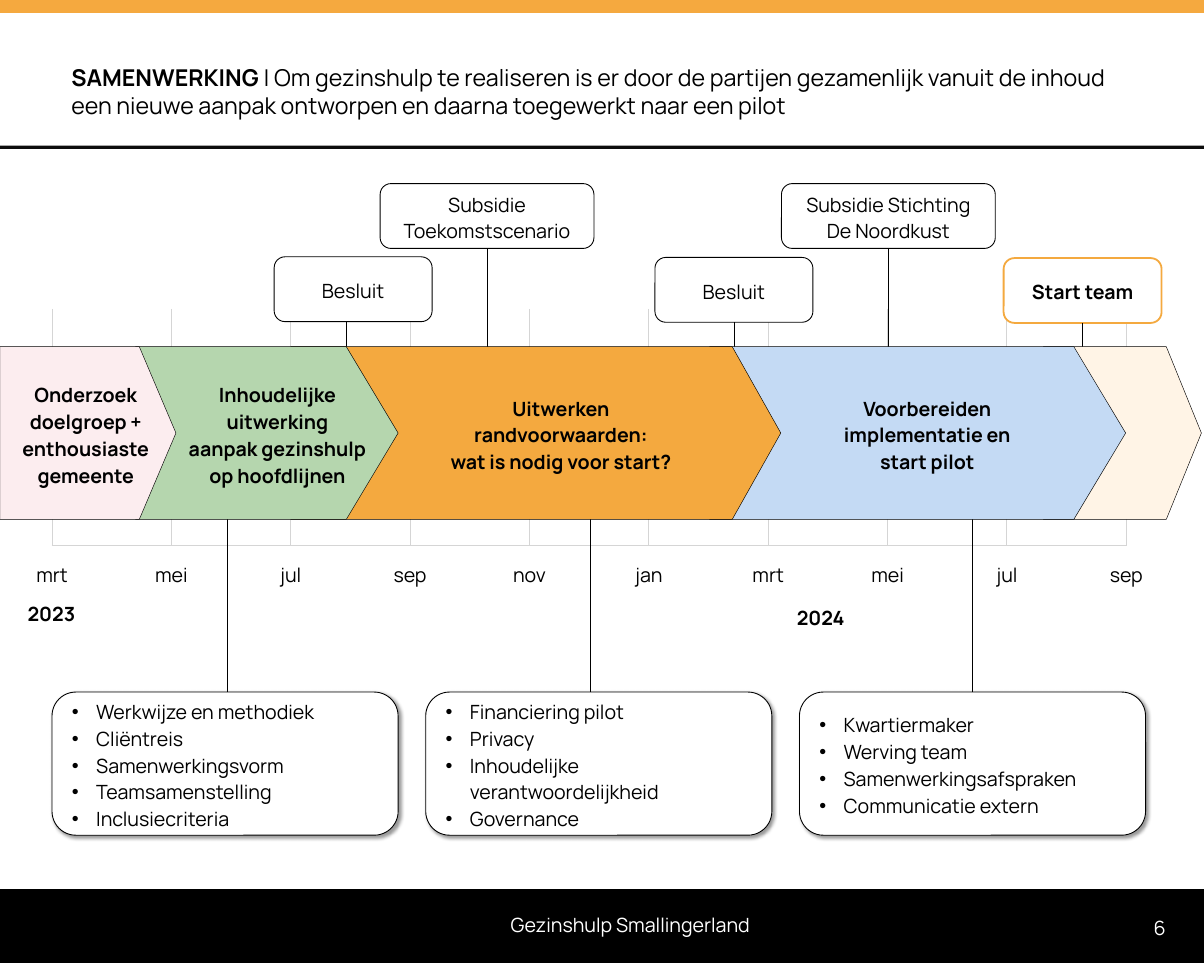
from dataclasses import dataclass

from lxml import etree
from pptx import Presentation
from pptx.dml.color import RGBColor
from pptx.enum.shapes import MSO_CONNECTOR, MSO_SHAPE
from pptx.enum.text import MSO_ANCHOR, MSO_AUTO_SIZE, PP_ALIGN
from pptx.oxml import parse_xml
from pptx.oxml.ns import nsdecls, qn
from pptx.util import Emu, Inches, Pt

RECTANGLE, ROUNDED, PENTAGON = MSO_SHAPE.RECTANGLE, MSO_SHAPE.ROUNDED_RECTANGLE, MSO_SHAPE.PENTAGON
STRAIGHT = MSO_CONNECTOR.STRAIGHT
MIDDLE, TOP = MSO_ANCHOR.MIDDLE, MSO_ANCHOR.TOP
CENTER, LEFT = PP_ALIGN.CENTER, PP_ALIGN.LEFT
TOP_SIDE, BOTTOM_SIDE = 0, 2

FONT = "Manrope"
BLACK, WHITE, ORANGE, GRID_GREY = "000000", "FFFFFF", "F4A93F", "D5D5D5"
GRID_COLUMNS, GRID_ROWS = 75, 60
AXIS_LEFT, AXIS_WIDTH, PERIODS = 3.24, 66.92, 9
ARROW_TOP, ARROW_HEIGHT, ARROW_BOTTOM = 21.6, 10.76, 32.36

presentation = Presentation()
presentation.slide_width, presentation.slide_height = Inches(18.75), Inches(15)
slide = presentation.slides.add_slide(presentation.slide_layouts[5])


@dataclass
class Box:
    left: float
    top: float
    width: float
    height: float

    def place(self) -> tuple:
        return across(self.left), down(self.top), across(self.width), down(self.height)


@dataclass
class Arrow:
    left: float
    width: float
    point: float
    fill: str
    text_left: float = 0
    text_width: float = 0
    lines: tuple = ()


@dataclass
class Callout:
    box: Box
    text: str
    line_column: float | None = None
    outline: str = BLACK
    outline_width: float = 1
    bold: bool = False


@dataclass
class Details:
    items: tuple
    line_column: float | None = None


def across(columns: float) -> Emu:
    return Emu(round(presentation.slide_width * columns / GRID_COLUMNS))


def down(rows: float) -> Emu:
    return Emu(round(presentation.slide_height * rows / GRID_ROWS))


def color(value: str) -> RGBColor:
    return RGBColor.from_string(value)


def add_run(paragraph, text: str, size: float = 22, bold: bool = False, ink: str = BLACK) -> None:
    run = paragraph.add_run()
    run.text = text
    run.font.name, run.font.size, run.font.bold = FONT, Pt(size), bold
    run.font.color.rgb = color(ink)


def write(shape, lines: tuple, bold: bool = False, ink: str = BLACK, bulleted: bool = False) -> None:
    frame = shape.text_frame
    frame.word_wrap, frame.vertical_anchor = True, MIDDLE
    frame.margin_left = frame.margin_right = Inches(0.2)
    frame.margin_top = frame.margin_bottom = 0
    for index, line in enumerate(lines):
        paragraph = frame.add_paragraph() if index else frame.paragraphs[0]
        paragraph.alignment = LEFT if bulleted else CENTER
        paragraph.line_spacing = 1.14
        if bulleted:
            properties = paragraph._p.get_or_add_pPr()
            properties.set("marL", str(Inches(0.38)))
            properties.set("indent", str(-Inches(0.38)))
            etree.SubElement(properties, qn("a:buFont"), typeface="Arial")
            etree.SubElement(properties, qn("a:buChar"), char="•")
        add_run(paragraph, line, bold=bold, ink=ink)


def add_label(box: Box, lines: tuple, bold: bool = False, ink: str = BLACK) -> None:
    write(slide.shapes.add_textbox(*box.place()), lines, bold, ink)


def add_block(kind, box: Box, fill: str, outline: str | None = None, width: float = 1):
    shape = slide.shapes.add_shape(kind, *box.place())
    shape.shadow.inherit = False
    shape.fill.solid()
    shape.fill.fore_color.rgb = color(fill)
    if outline:
        shape.line.color.rgb = color(outline)
        shape.line.width = Pt(width)
    else:
        shape.line.fill.background()
    return shape


def add_line(shape, side: int, column: float | None, start_row: float) -> None:
    box_middle = shape.left + shape.width // 2
    position = box_middle if column is None else across(column)
    connector = slide.shapes.add_connector(
        STRAIGHT, position, down(start_row), position, down(ARROW_BOTTOM))
    if column is None:
        connector.begin_connect(shape, side)
    connector.line.color.rgb = color(BLACK)
    connector.line.width = Pt(1)
    etree.SubElement(connector._element.spPr, qn("a:effectLst"))


def add_drop_shadow(shape) -> None:
    effects = shape._element.spPr.find(qn("a:effectLst"))
    effects.append(parse_xml(
        f'<a:outerShdw {nsdecls("a")} blurRad="{Pt(4)}" dist="{Pt(3)}" dir="2700000" algn="tl" '
        f'rotWithShape="0"><a:srgbClr val="{BLACK}"><a:alpha val="40000"/></a:srgbClr></a:outerShdw>'))


def add_axis(box: Box) -> None:
    table = slide.shapes.add_table(1, PERIODS, *box.place()).table
    table.first_row = table.horz_banding = False
    for column, cell in zip(table.columns, table.rows[0].cells):
        column.width = across(box.width / PERIODS)
        properties = cell._tc.get_or_add_tcPr()
        for side in ("lnL", "lnR", "lnT", "lnB"):
            border = etree.SubElement(properties, qn(f"a:{side}"), w=str(Pt(1)))
            if side == "lnT":
                etree.SubElement(border, qn("a:noFill"))
            else:
                fill = etree.SubElement(border, qn("a:solidFill"))
                etree.SubElement(fill, qn("a:srgbClr"), val=GRID_GREY)
        cell.fill.background()


def add_title(box: Box, heading: str, message: str) -> None:
    title = slide.shapes.title
    title.left, title.top, title.width, title.height = box.place()
    frame = title.text_frame
    frame.auto_size, frame.word_wrap, frame.vertical_anchor = MSO_AUTO_SIZE.NONE, True, TOP
    frame.margin_left = frame.margin_right = frame.margin_top = frame.margin_bottom = Inches(0.1)
    paragraph = frame.paragraphs[0]
    paragraph.alignment, paragraph.line_spacing = LEFT, 1.0
    add_run(paragraph, heading, 26, True)
    add_run(paragraph, message, 26)


MONTHS = ("mrt", "mei", "jul", "sep", "nov", "jan", "mrt", "mei", "jul", "sep")
CALLOUTS = (
    Callout(Box(17.08, 16, 9.84, 4.04), "Besluit", 21.56),
    Callout(Box(23.68, 11.44, 13.32, 4.04), "Subsidie Toekomstscenario"),
    Callout(Box(40.8, 16.04, 9.84, 4.04), "Besluit"),
    Callout(Box(48.68, 11.44, 13.32, 4.04), "Subsidie Stichting De Noordkust"),
    Callout(Box(62.52, 16.08, 9.84, 4.04), "Start team", None, ORANGE, 2, True),
)
DETAILS = (
    Details(("Werkwijze en methodiek", "Cliëntreis", "Samenwerkingsvorm", "Teamsamenstelling",
             "Inclusiecriteria"), 14.16),
    Details(("Financiering pilot", "Privacy", "Inhoudelijke verantwoordelijkheid", "Governance"), 36.8),
    Details(("Kwartiermaker", "Werving team", "Samenwerkingsafspraken", "Communicatie extern")),
)
ARROWS = (
    Arrow(65, 9.84, 0.222, "FFF4E6"),
    Arrow(44.2, 25.92, 0.3, "C4DAF4", 51.4, 12.72, ("Voorbereiden implementatie en start pilot",)),
    Arrow(18.12, 30.52, 0.281, ORANGE, 26.2, 17.48,
          ("Uitwerken randvoorwaarden:", "wat is nodig voor start?")),
    Arrow(8.44, 16.36, 0.3, "B5D6AE", 10.36, 13.84,
          ("Inhoudelijke uitwerking", "aanpak gezinshulp op hoofdlijnen")),
    Arrow(0, 10.96, 0.212, "FCEDEF", -1.32, 13.32,
          ("Onderzoek doelgroep + enthousiaste", "gemeente")),
)

add_block(RECTANGLE, Box(0, 0, GRID_COLUMNS, 0.8), "F5A93F")
add_block(RECTANGLE, Box(0, 9.08, GRID_COLUMNS, 0.2), "0D0D0D")
add_block(RECTANGLE, Box(0, 55.4, GRID_COLUMNS, 4.6), BLACK)
add_label(Box(70.24, 56.12, 4, 3.2), ("6",), ink=WHITE)
add_label(Box(24.84, 55.94, 28.84, 3.2), ("Gezinshulp Smallingerland",), ink=WHITE)
add_title(Box(4.04, 3.56, AXIS_WIDTH, 3.8), "SAMENWERKING ",
          "| Om gezinshulp te realiseren is er door de partijen gezamenlijk vanuit de inhoud "
          "een nieuwe aanpak ontworpen en daarna toegewerkt naar een pilot")
add_axis(Box(AXIS_LEFT, 19.24, AXIS_WIDTH, 14.76))

for callout in CALLOUTS:
    shape = add_block(ROUNDED, callout.box, WHITE, callout.outline, callout.outline_width)
    write(shape, (callout.text,), callout.bold)
    add_line(shape, BOTTOM_SIDE, callout.line_column, callout.box.top + callout.box.height)

for index, details in enumerate(DETAILS):
    box = Box(AXIS_LEFT + 23.28 * index, 43.12, 21.56, 8.92)
    shape = add_block(ROUNDED, box, WHITE, BLACK)
    add_drop_shadow(shape)
    write(shape, details.items, bulleted=True)
    add_line(shape, TOP_SIDE, details.line_column, box.top)

for arrow in ARROWS:
    shape = add_block(PENTAGON, Box(arrow.left, ARROW_TOP, arrow.width, ARROW_HEIGHT),
                      arrow.fill, BLACK, 0.5)
    shape.adjustments[0] = arrow.point
    if arrow.lines:
        add_label(Box(arrow.text_left, 24.9, arrow.text_width, 4.2), arrow.lines, True)

for index, month in enumerate(MONTHS):
    add_label(Box(AXIS_LEFT + AXIS_WIDTH / PERIODS * index - 2.48, 34.64, 4.96, 2.16), (month,))
add_label(Box(0.72, 37.08, 4.96, 2.16), ("2023",), True)
add_label(Box(48.64, 37.28, 4.96, 2.16), ("2024",), True)

presentation.save("out.pptx")
